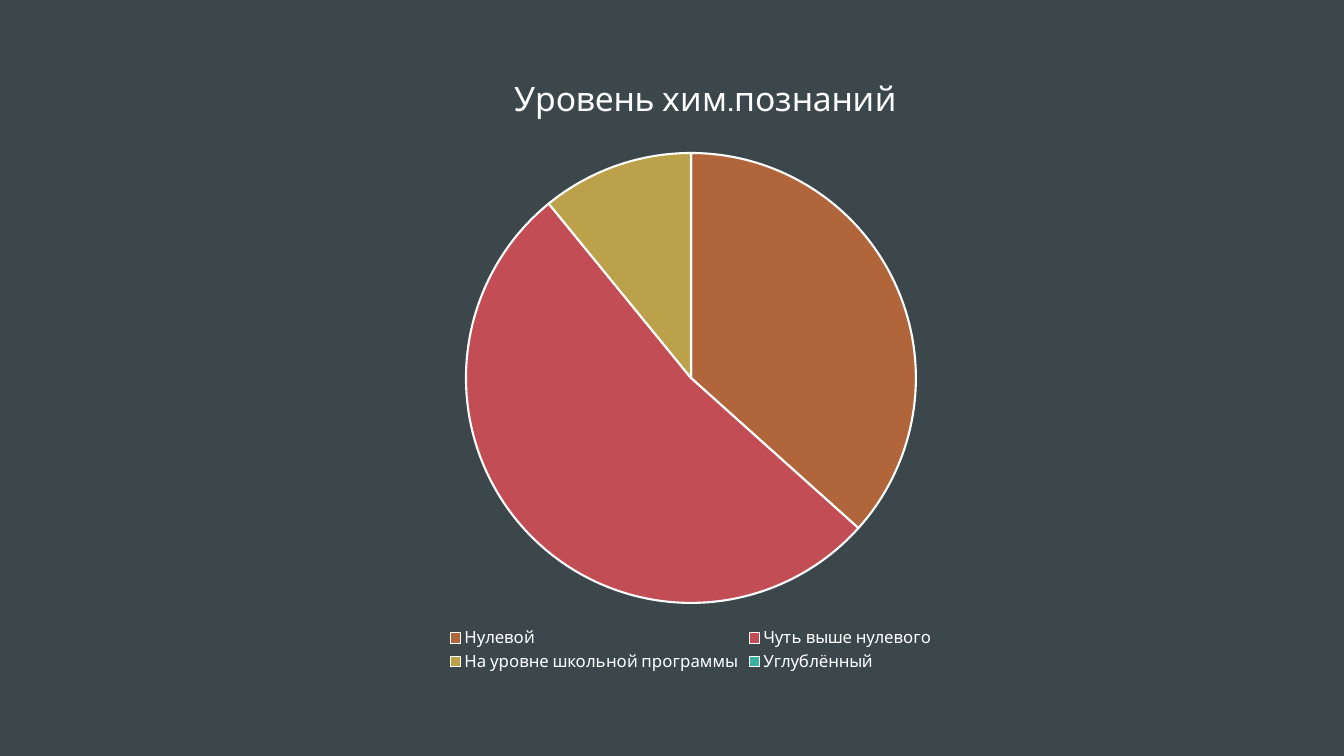
from lxml import etree
from pptx import Presentation
from pptx import util as u
from pptx.chart.data import CategoryChartData
from pptx.dml.color import RGBColor
from pptx.enum import chart as charts, shapes
from pptx.oxml import parse_xml
from pptx.oxml.ns import nsdecls

# Content
TITLE = "Уровень хим.познаний"
LEVELS = [  # label, value, colour
    ("Нулевой", 37, "B1653B"),
    ("Чуть выше нулевого", 53, "C34D54"),
    ("На уровне школьной программы", 11, "BBA149"),
    ("Углублённый", 0, "3BB1A3"),
]
BACKDROP, WHITE = "3C474C", "FFFFFF"
FONT = "Cabin"

# Lengths in px
PAGE = (1344, 756)
CHART = (232, 60, 918, 616)
PIE = (466, 153, 450, 450)
TITLE_CORNER = (508, 69)
SCALE = 914400 / 100.8


def px(length):
    return u.Emu(round(length * SCALE))


def color(value):
    return RGBColor.from_string(value)


def style(font, size):
    for name, value in {"name": FONT, "size": u.Pt(size), "bold": False}.items():
        setattr(font, name, value)
    font.color.rgb = color(WHITE)


def manual_layout(left, top, width=None, height=None, inner=False):
    """Layout element placed as fractions of the chart frame."""
    fractions = {"x": (left - CHART[0]) / CHART[2], "y": (top - CHART[1]) / CHART[3]}
    if width:
        fractions.update(w=width / CHART[2], h=height / CHART[3])
    modes = [f'<c:{axis}Mode val="edge"/>' for axis in "xy"]
    values = [f'<c:{name} val="{value:.4f}"/>' for name, value in fractions.items()]
    target = '<c:layoutTarget val="inner"/>' if inner else ""
    body = target + "".join(modes + values)
    return parse_xml(
        f'<c:layout {nsdecls("c")}><c:manualLayout>{body}</c:manualLayout></c:layout>')


def place(parent, layout, index):
    for old in parent.findall(layout.tag):
        parent.remove(old)
    parent.insert(index, layout)


deck = Presentation()
deck.slide_width, deck.slide_height = map(px, PAGE)
page = deck.slides.add_slide(deck.slide_layouts[6])

# Backdrop
backdrop = page.shapes.add_shape(shapes.MSO_SHAPE.RECTANGLE, 0, 0, *map(px, PAGE))
backdrop.shadow.inherit = False
backdrop.fill.solid()
backdrop.fill.fore_color.rgb = color(BACKDROP)
backdrop.line.fill.background()

# Pie chart
data = CategoryChartData()
data.categories = [label for label, _, _ in LEVELS]
data.add_series(TITLE, [value for _, value, _ in LEVELS])
chart = page.shapes.add_chart(
    charts.XL_CHART_TYPE.PIE, *map(px, CHART), data).chart
style(chart.font, 10)
plot = chart.plots[0]
plot.vary_by_categories = True
for index, (_, _, fill) in enumerate(LEVELS):
    slice_format = plot.series[0].points[index].format
    slice_format.fill.solid()
    slice_format.fill.fore_color.rgb = color(fill)
    slice_format.line.color.rgb = color(WHITE)
    slice_format.line.width = u.Pt(1.5)

# Title and legend
chart.has_title = True
title = chart.chart_title
title.text_frame.text = TITLE
style(title.text_frame.paragraphs[0].runs[0].font, 24)
title.include_in_layout = False
chart.has_legend = True
chart.legend.position = charts.XL_LEGEND_POSITION.BOTTOM
chart.legend.include_in_layout = False
style(chart.legend.font, 12)

# Positions inside the chart
place(title._element, manual_layout(*TITLE_CORNER), 1)
plot_area = chart._chartSpace.chart.plotArea
place(plot_area, manual_layout(*PIE, inner=True), 0)

deck.save("out.pptx")
